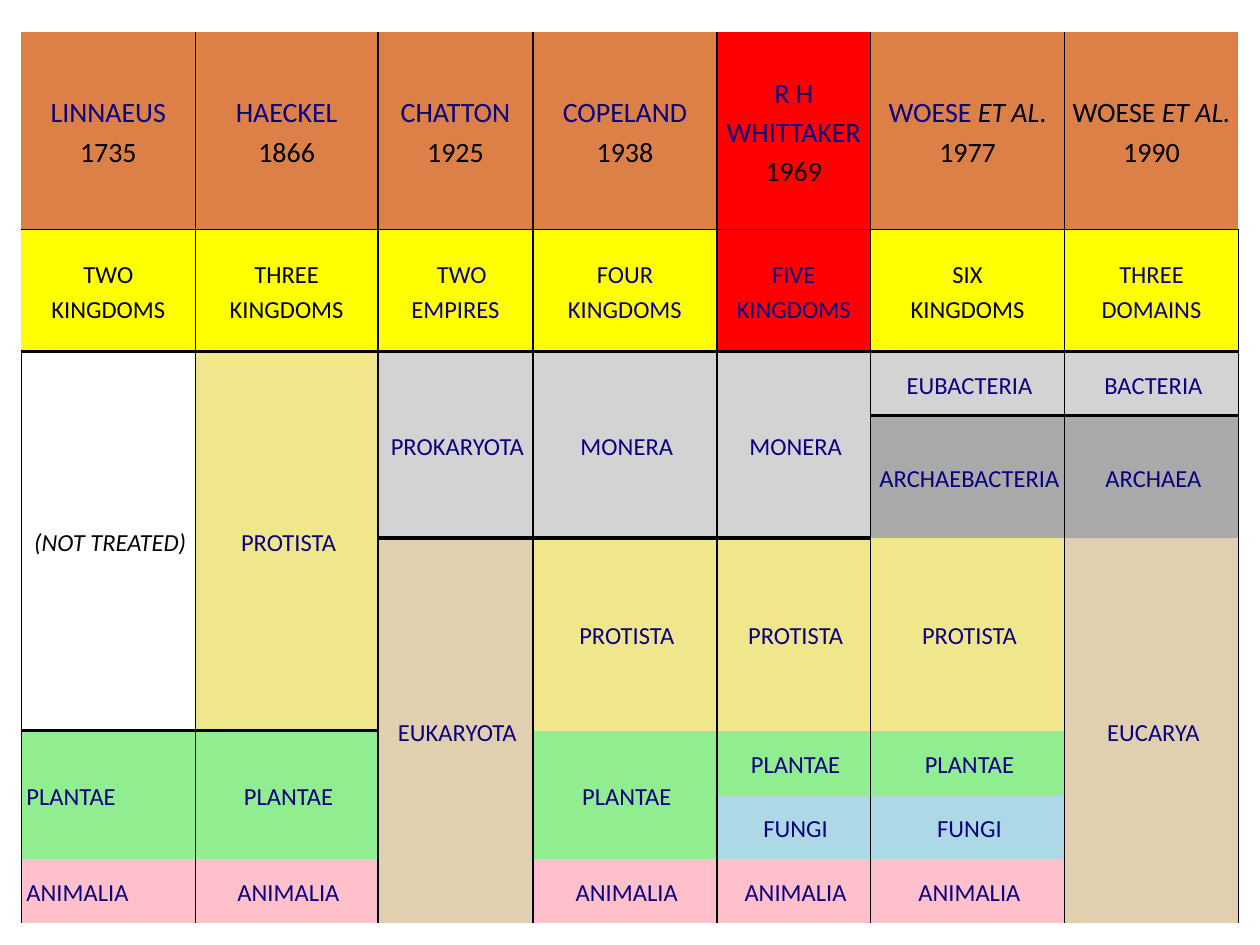
from typing import NamedTuple

from lxml import etree
from pptx import Presentation
from pptx import util as u
from pptx.dml.color import RGBColor
from pptx.enum import text
from pptx.oxml import ns

BLACK, NAVY = "000000", "0B0080"
ORANGE, RED, YELLOW = "DD8047", "FF0000", "FFFF00"
FONT = "Calibri"
NO_STYLE = "{2D5ABB26-0587-4C30-8999-92F81FD0307C}"
THIN, THICK = 1, 2.25
COLUMN_WIDTHS = [1.38, 1.45, 1.23, 1.46, 1.22, 1.54, 1.38]
ROW_HEIGHTS = [1.57, 0.97, 0.51, 0.97, 1.53, 0.51, 0.51, 0.51]
FIRST_TAXON_ROW = 2
TAXON_FILLS = {
    "(NOT TREATED)": None, "PROTISTA": "F0E68C", "PLANTAE": "90EE90",
    "FUNGI": "ADD8E6", "ANIMALIA": "FFC0CB", "PROKARYOTA": "D3D3D3",
    "MONERA": "D3D3D3", "EUBACTERIA": "D3D3D3", "BACTERIA": "D3D3D3",
    "ARCHAEBACTERIA": "A9A9A9", "ARCHAEA": "A9A9A9",
    "EUKARYOTA": "E0D0B0", "EUCARYA": "E0D0B0",
}


class Span(NamedTuple):
    words: str
    colour: str = NAVY
    italic: bool = False


class System(NamedTuple):
    """One column: author, year, number of groups, and taxa with their row spans."""
    author: list[Span]
    year: str
    groups: list[str]
    groups_colour: str
    taxa: list[tuple[str, int]]


SYSTEMS = [
    System([Span("LINNAEUS")], "1735", ["TWO KINGDOMS"], BLACK,
           [("(NOT TREATED)", 3), ("PLANTAE", 2), ("ANIMALIA", 1)]),
    System([Span("HAECKEL")], "1866", ["THREE KINGDOMS"], BLACK,
           [("PROTISTA", 3), ("PLANTAE", 2), ("ANIMALIA", 1)]),
    System([Span("CHATTON")], "1925", ["TWO EMPIRES"], NAVY,
           [("PROKARYOTA", 2), ("EUKARYOTA", 4)]),
    System([Span("COPELAND")], "1938", ["FOUR KINGDOMS"], NAVY,
           [("MONERA", 2), ("PROTISTA", 1), ("PLANTAE", 2), ("ANIMALIA", 1)]),
    System([Span("R H WHITTAKER")], "1969", ["FIVE KINGDOMS"], NAVY,
           [("MONERA", 2), ("PROTISTA", 1), ("PLANTAE", 1), ("FUNGI", 1),
            ("ANIMALIA", 1)]),
    System([Span("WOESE "), Span("ET AL", BLACK, True), Span(".", BLACK)],
           "1977", ["SIX", "KINGDOMS"], BLACK,
           [("EUBACTERIA", 1), ("ARCHAEBACTERIA", 1), ("PROTISTA", 1),
            ("PLANTAE", 1), ("FUNGI", 1), ("ANIMALIA", 1)]),
    System([Span("WOESE ", BLACK), Span("ET AL.", BLACK, True)],
           "1990", ["THREE DOMAINS"], NAVY,
           [("BACTERIA", 1), ("ARCHAEA", 1), ("EUCARYA", 4)]),
]


def rgb(colour: str) -> RGBColor:
    return RGBColor.from_string(colour)


def set_borders(cell, **widths: float) -> None:
    """Draw black borders; keys are L, R, T and B, widths are points."""
    properties = cell._tc.get_or_add_tcPr()
    for side in "LRTB":
        if side in widths:
            line = etree.SubElement(properties, ns.qn(f"a:ln{side}"),
                                    w=str(u.Pt(widths[side])))
            fill = etree.SubElement(line, ns.qn("a:solidFill"))
            etree.SubElement(fill, ns.qn("a:srgbClr"), val=BLACK)


def add_spans(para, spans: list[Span], size: float) -> None:
    for item in spans:
        span = para.add_run()
        span.text = item.words
        span.font.name = FONT
        span.font.size = u.Pt(size)
        span.font.italic = item.italic
        span.font.color.rgb = rgb(item.colour)


def format_cell(cell, fill: str | None, margins: tuple[float, ...]) -> None:
    cell.vertical_anchor = text.MSO_ANCHOR.MIDDLE
    (cell.margin_left, cell.margin_top,
     cell.margin_right, cell.margin_bottom) = map(u.Inches, margins)
    if fill is None:
        cell.fill.background()
    else:
        cell.fill.solid()
        cell.fill.fore_color.rgb = rgb(fill)
    for para in cell.text_frame.paragraphs:
        para.alignment = text.PP_ALIGN.CENTER
        para.line_spacing = 1.15


def fill_header(cell, system: System, fill: str) -> None:
    para = cell.text_frame.paragraphs[0]
    add_spans(para, system.author, 16)
    para.add_line_break()
    add_spans(para, [Span(system.year, BLACK)], 16)
    for line_break in para._p.findall(ns.qn("a:br")):
        etree.SubElement(line_break, ns.qn("a:rPr"), sz="1600")
    format_cell(cell, fill, (0.04, 0.04, 0.04, 0.04))


def fill_groups(cell, system: System, fill: str) -> None:
    frame = cell.text_frame
    for index, words in enumerate(system.groups):
        para = frame.add_paragraph() if index else frame.paragraphs[0]
        add_spans(para, [Span(words, system.groups_colour)], 14)
        if words == "TWO EMPIRES":
            para._p.get_or_add_pPr().set("indent", str(u.Inches(0.1)))
    format_cell(cell, fill, (0.04, 0.01, 0.04, 0.01))


def fill_taxa(table, column: int, system: System) -> None:
    row = FIRST_TAXON_ROW
    for name, rows in system.taxa:
        cell = table.cell(row, column)
        if rows > 1:
            cell.merge(table.cell(row + rows - 1, column))
        untreated = name == "(NOT TREATED)"
        para = cell.text_frame.paragraphs[0]
        add_spans(para, [Span(name, BLACK if untreated else NAVY, untreated)], 14)
        format_cell(cell, TAXON_FILLS[name], (0.04, 0.01, 0.01, 0.01))
        if column == 0 and not untreated:
            para.alignment = text.PP_ALIGN.LEFT
        row += rows


def rule_column(table, column: int) -> None:
    """Vertical rules everywhere except the outer edges beside the headings."""
    last = len(COLUMN_WIDTHS) - 1
    for row in range(len(ROW_HEIGHTS)):
        widths = {}
        if column > 0 or row >= FIRST_TAXON_ROW:
            widths["L"] = THIN
        if column < last or row > 0:
            widths["R"] = THIN
        if row in (1, 2):
            widths["T"] = THIN if row == 1 else THICK
        if row in (0, 1):
            widths["B"] = THIN if row == 0 else THICK
        set_borders(table.cell(row, column), **widths)


def add_kingdom_table(page) -> None:
    frame = page.shapes.add_table(
        len(ROW_HEIGHTS), len(COLUMN_WIDTHS), u.Inches(0.17), u.Inches(0.25),
        u.Inches(sum(COLUMN_WIDTHS)), u.Inches(sum(ROW_HEIGHTS)))
    table = frame.table
    table.first_row = table.horz_banding = False
    table._tbl.tblPr.find(ns.qn("a:tableStyleId")).text = NO_STYLE
    for column, width in zip(table.columns, COLUMN_WIDTHS):
        column.width = u.Inches(width)
    for row, height in zip(table.rows, ROW_HEIGHTS):
        row.height = u.Inches(height)
    for column, system in enumerate(SYSTEMS):
        rule_column(table, column)
        highlighted = system.year == "1969"
        fill_header(table.cell(0, column), system, RED if highlighted else ORANGE)
        fill_groups(table.cell(1, column), system, RED if highlighted else YELLOW)
        fill_taxa(table, column, system)


def main() -> None:
    deck = Presentation()
    deck.slide_width, deck.slide_height = u.Inches(10), u.Inches(7.5)
    page = deck.slides.add_slide(deck.slide_layouts[6])
    add_kingdom_table(page)
    deck.save("out.pptx")


if __name__ == "__main__":
    main()
